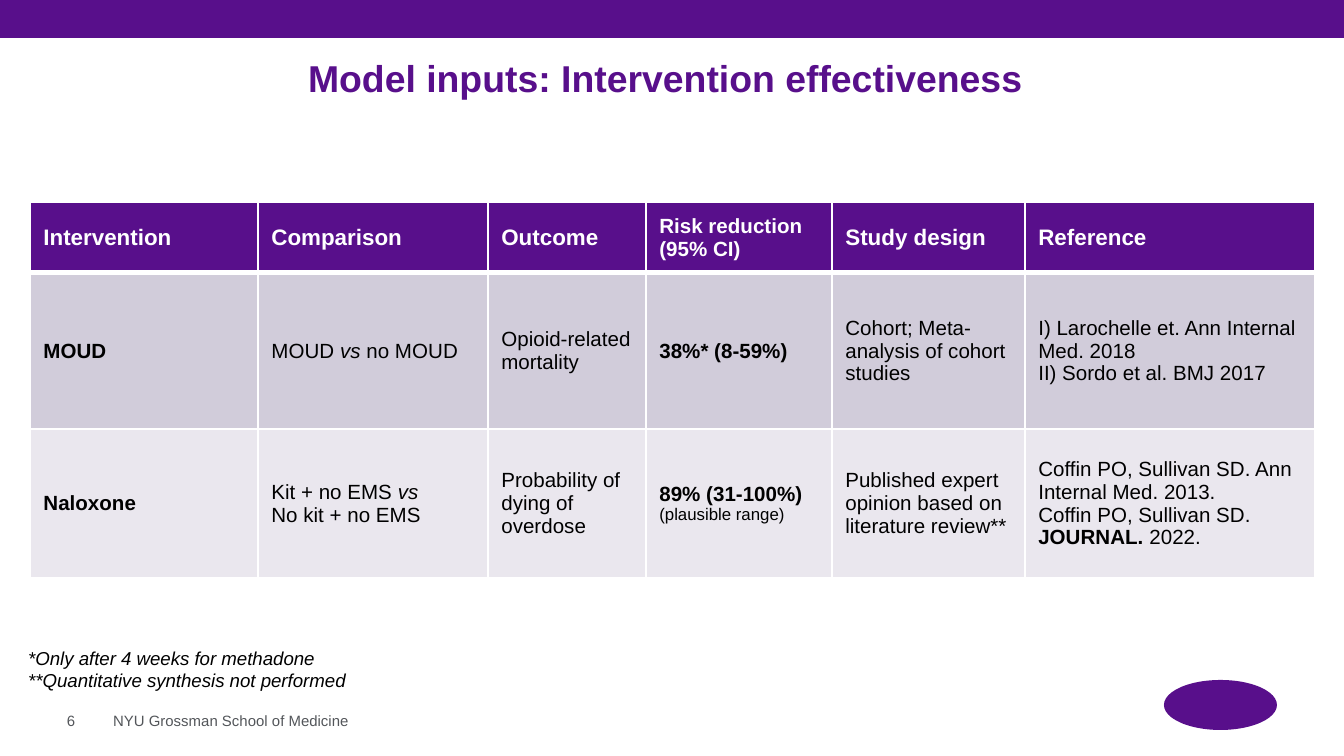
from dataclasses import dataclass

from lxml.etree import SubElement
from pptx import Presentation
from pptx.dml.color import RGBColor as RGB
from pptx.enum.shapes import MSO_SHAPE as SHAPE
from pptx.enum.text import MSO_ANCHOR as ANCHOR, PP_ALIGN as ALIGN
from pptx.oxml.ns import qn
from pptx.util import Pt

PX = 9144000 / 1344


@dataclass(frozen=True)
class Theme:
    font: str = "Arial"
    purple: str = "580F8B"
    band_dark: str = "D1CCDA"
    band_light: str = "EAE7EE"
    white: str = "FFFFFF"
    black: str = "000000"
    grey: str = "53565A"
    title: int = 20
    head: int = 12
    body: int = 11
    note: int = 10
    small: int = 9
    footer: int = 8


T = Theme()
BOLD = {"bold": True}
ITALIC = {"italic": True}

COLUMNS = [228, 230, 158, 186, 193, 290]
ROWS = [71, 156, 149]
HEADERS = ["Intervention", "Comparison", "Outcome",
           "Risk reduction (95% CI)", "Study design", "Reference"]
BODY = [
    [
        [[("MOUD", BOLD)]],
        [["MOUD ", ("vs ", ITALIC), "no MOUD"]],
        [["Opioid-related mortality"]],
        [[("38%* (8-59%)", BOLD)]],
        [["Cohort; Meta-analysis of cohort studies"]],
        [["I) Larochelle et. Ann Internal Med. 2018"],
         ["II) Sordo et al. BMJ 2017"]],
    ],
    [
        [[("Naloxone", BOLD)]],
        [["Kit + no EMS ", ("vs", ITALIC)], ["No kit + no EMS"]],
        [["Probability of dying of overdose"]],
        [[("89% (31-100%)", BOLD)],
         [("(plausible range)", {"size": T.small})]],
        [["Published expert opinion based on literature review**"]],
        [["Coffin PO, Sullivan SD. Ann Internal Med. 2013."],
         ["Coffin PO, Sullivan SD. ", ("JOURNAL. ", BOLD), "2022."]],
    ],
]


def px(*values):
    return [round(v * PX) for v in values]


def set_all(obj, values):
    for name, value in values.items():
        setattr(obj, name, value)


def write(tf, paragraphs, size, color, **base):
    for i, runs in enumerate(paragraphs):
        p = tf.add_paragraph() if i else tf.paragraphs[0]
        p.alignment = ALIGN.LEFT
        for run in runs:
            text, extra = (run, {}) if isinstance(run, str) else run
            style = {"name": T.font, "size": size, "bold": False,
                     "italic": False, **base, **extra}
            style["size"] = Pt(style["size"])
            r = p.add_run()
            r.text = text
            set_all(r.font, style)
            r.font.color.rgb = RGB.from_string(color)


def no_insets(tf):
    set_all(tf, dict.fromkeys(
        ("margin_left", "margin_top", "margin_right", "margin_bottom"), 0))


def add_title(s, box, text):
    sp = s.shapes.title
    set_all(sp, dict(zip(("left", "top", "width", "height"), px(*box))))
    tf = sp.text_frame
    no_insets(tf)
    set_all(tf, {"word_wrap": True, "vertical_anchor": ANCHOR.BOTTOM})
    write(tf, [[text]], T.title, T.purple, bold=True)
    tf.paragraphs[0].line_spacing = 0.85


def add_block(s, box, shape=SHAPE.RECTANGLE):
    sp = s.shapes.add_shape(shape, *px(*box))
    sp.shadow.inherit = False
    sp.fill.solid()
    sp.fill.fore_color.rgb = RGB.from_string(T.purple)
    sp.line.fill.background()


def add_footer(s, box, text):
    tf = s.shapes.add_textbox(*px(*box)).text_frame
    no_insets(tf)
    set_all(tf, {"word_wrap": True, "vertical_anchor": ANCHOR.MIDDLE})
    write(tf, [[text]], T.footer, T.grey)


def add_notes(s, box, lines):
    tf = s.shapes.add_textbox(*px(*box)).text_frame
    tf.word_wrap = False
    write(tf, [[line] for line in lines], T.note, T.black, italic=True)


def set_borders(cell, **widths):
    tc_pr = cell._tc.get_or_add_tcPr()
    for side in "LRTB":
        ln = SubElement(tc_pr, qn(f"a:ln{side}"), w=str(Pt(widths.get(side, 1))))
        fill = SubElement(ln, qn("a:solidFill"))
        SubElement(fill, qn("a:srgbClr"), val=T.white)


def fill_cell(cell, paragraphs, fill, size, color, borders, **base):
    set_borders(cell, **borders)
    cell.fill.solid()
    cell.fill.fore_color.rgb = RGB.from_string(fill)
    cell.vertical_anchor = ANCHOR.MIDDLE
    write(cell.text_frame, paragraphs, size, color, **base)


def add_inputs_table(s, left, top):
    box = px(left, top, sum(COLUMNS), sum(ROWS))
    table = s.shapes.add_table(len(ROWS), len(COLUMNS), *box).table
    for column, width in zip(table.columns, px(*COLUMNS)):
        column.width = width
    for row, height in zip(table.rows, px(*ROWS)):
        row.height = height
    for c, text in enumerate(HEADERS):
        size = T.body if text.startswith("Risk") else T.head
        fill_cell(table.cell(0, c), [[text]], T.purple, size, T.white,
                  {"B": 3}, bold=True)
    for r, (cells, band) in enumerate(zip(BODY, (T.band_dark, T.band_light)), 1):
        borders = {"T": 3} if r == 1 else {}
        for c, paragraphs in enumerate(cells):
            fill_cell(table.cell(r, c), paragraphs, band, T.body, T.black, borders)


def main():
    prs = Presentation()
    prs.slide_width, prs.slide_height = px(1344, 756)
    s = prs.slides.add_slide(prs.slide_layouts[5])
    add_block(s, (0, 0, 1344, 38))
    add_block(s, (1164, 680, 113, 50), SHAPE.OVAL)
    add_footer(s, (113, 712, 497, 17), "NYU Grossman School of Medicine")
    add_footer(s, (67, 712, 38, 17), "6")
    add_title(s, (308, 40, 727, 60), "Model inputs: Intervention effectiveness")
    add_inputs_table(s, 30, 202)
    add_notes(s, (15, 640, 347, 59), ["*Only after 4 weeks for methadone",
                                      "**Quantitative synthesis not performed"])
    prs.save("out.pptx")


if __name__ == "__main__":
    main()
